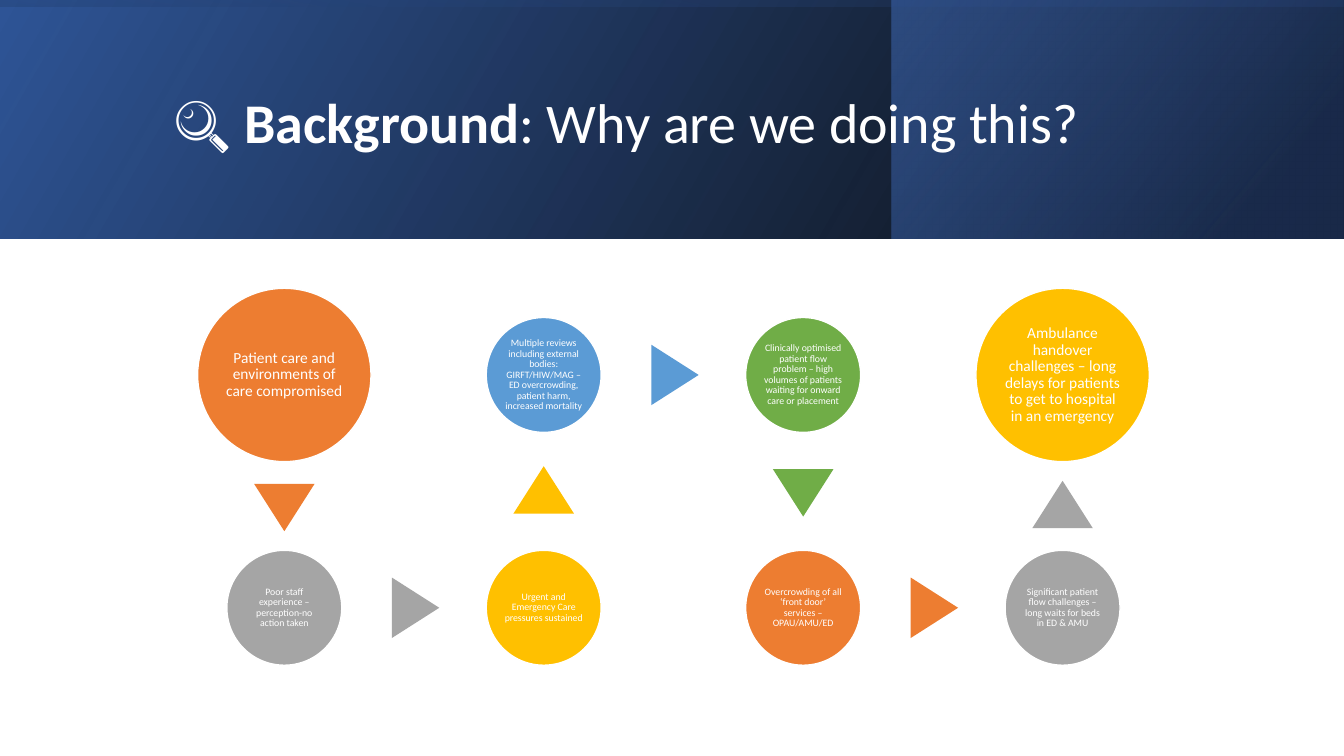
from lxml import etree
from pptx import Presentation
from pptx.dml.color import RGBColor
from pptx.enum.shapes import MSO_SHAPE
from pptx.enum.text import MSO_ANCHOR, MSO_AUTO_SIZE, PP_ALIGN
from pptx.oxml.ns import qn
from pptx.util import Inches, Pt

RECTANGLE = MSO_SHAPE.RECTANGLE
OVAL = MSO_SHAPE.OVAL
TRIANGLE = MSO_SHAPE.ISOSCELES_TRIANGLE
MIDDLE = MSO_ANCHOR.MIDDLE
LEFT, CENTER = PP_ALIGN.LEFT, PP_ALIGN.CENTER
NO_AUTOFIT = MSO_AUTO_SIZE.NONE

FONT = "Calibri"
TITLE_ONLY = 5
COLORS = {
    "white": "FFFFFF", "black": "000000", "navy": "203864",
    "deep_blue": "2F5597", "royal": "4472C4", "orange": "ED7D31",
    "gray": "A5A5A5", "gold": "FFC000", "sky": "5B9BD5", "green": "70AD47",
}

# Header bands: left, top, width, height, rotation, gradient angle,
# and stops of position %, colour, opacity %
BANDS = [
    (0, 0, 13.33, 2.37, 0, 330,
     [(0, "black", 96), (100, "deep_blue", 100)]),
    (8.84, 0, 4.48, 2.37, 0, 320,
     [(19, "navy", 68), (100, "royal", 48)]),
    (5.48, -5.48, 2.37, 13.33, 270, 350,
     [(23, "deep_blue", 16), (99, "black", 45)]),
]

# Flow grid: centre of the first column, pitch, and centre of each row
FIRST_COLUMN, COLUMN_PITCH = 2.82, 2.573
ROWS = (3.72, 6.03)
ARROW_WIDTH, ARROW_HEIGHT, ARROW_SHIFT = 0.6, 0.47, 0.015

# Circle sizes: diameter, text inset, font size
SIZES = {"large": (1.72, 0.02, 11), "small": (1.14, 0.01, 7)}

# Steps in reading order: column, row, size, colour, wording
STEPS = [
    (0, 0, "large", "orange",
     "Patient care and environments of care compromised"),
    (0, 1, "small", "gray",
     "Poor staff experience – perception-no action taken"),
    (1, 1, "small", "gold", "Urgent and Emergency Care pressures sustained"),
    (1, 0, "small", "sky",
     "Multiple reviews including external bodies: GIRFT/HIW/MAG – "
     "ED overcrowding, patient harm, increased mortality"),
    (2, 0, "small", "green",
     "Clinically optimised patient flow problem – high volumes of patients "
     "waiting for onward care or placement"),
    (2, 1, "small", "orange",
     "Overcrowding of all ‘front door’ services – OPAU/AMU/ED"),
    (3, 1, "small", "gray",
     "Significant patient flow challenges – long waits for beds in ED & AMU"),
    (3, 0, "large", "gold",
     "Ambulance handover challenges – long delays for patients to get to "
     "hospital in an emergency"),
]


def rgb(name):
    return RGBColor.from_string(COLORS[name])


def apply(target, formats):
    for attribute, value in formats.items():
        setattr(target, attribute, value)


def add_run(paragraph, text, size, bold=False):
    run = paragraph.add_run()
    run.text = text
    apply(run.font, {"name": FONT, "size": Pt(size), "bold": bold})
    run.font.color.rgb = rgb("white")


def add_filled(shapes, kind, center, width, height, color):
    x, y = center
    shape = shapes.add_shape(kind, Inches(x - width / 2), Inches(y - height / 2),
                             Inches(width), Inches(height))
    shape.shadow.inherit = False
    shape.fill.solid()
    shape.fill.fore_color.rgb = rgb(color)
    shape.line.fill.background()
    return shape


def set_gradient(shape, angle, stops):
    """Swap the solid fill for a linear gradient with transparent stops."""
    gradient = etree.Element(qn("a:gradFill"))
    stop_list = etree.SubElement(gradient, qn("a:gsLst"))
    for position, color, opacity in stops:
        stop = etree.SubElement(stop_list, qn("a:gs"), pos=str(position * 1000))
        tint = etree.SubElement(stop, qn("a:srgbClr"), val=COLORS[color])
        etree.SubElement(tint, qn("a:alpha"), val=str(opacity * 1000))
    etree.SubElement(gradient, qn("a:lin"), ang=str(angle * 60000), scaled="0")
    properties = shape.element.spPr
    properties.replace(properties.find(qn("a:solidFill")), gradient)


def add_band(shapes, left, top, width, height, rotation, angle, stops):
    center = (left + width / 2, top + height / 2)
    band = add_filled(shapes, RECTANGLE, center, width, height, "deep_blue")
    band.rotation = rotation
    band.element.spPr.find(qn("a:xfrm")).set("flipH", "1")
    set_gradient(band, angle, stops)


def format_title(slide):
    title = slide.shapes.title
    apply(title, {"left": Inches(1.51), "top": Inches(0.38),
                  "width": Inches(10.63), "height": Inches(1.72)})
    apply(title.text_frame, {"word_wrap": True, "vertical_anchor": MIDDLE,
                             "auto_size": NO_AUTOFIT})
    heading = title.text_frame.paragraphs[0]
    apply(heading, {"alignment": LEFT, "line_spacing": 0.9})
    for text, bold in ((" ", True), ("🔍 ", False), ("Background", True),
                       (": Why are we doing this?", False)):
        add_run(heading, text, 40, bold)
    # Bring the title in front of the bands
    slide.shapes.element.append(title.element)


def step_center(step):
    return FIRST_COLUMN + COLUMN_PITCH * step[0], ROWS[step[1]]


def add_step(shapes, step):
    size, color, wording = step[2:]
    diameter, inset, font_size = SIZES[size]
    circle = add_filled(shapes, OVAL, step_center(step), diameter, diameter, color)
    circle.line.color.rgb = rgb("white")
    circle.line.width = Pt(1)
    frame = circle.text_frame
    apply(frame, {"word_wrap": True, "vertical_anchor": MIDDLE})
    apply(frame, {f"margin_{side}": Inches(inset)
                  for side in ("left", "right", "top", "bottom")})
    paragraph = frame.paragraphs[0]
    apply(paragraph, {"alignment": CENTER, "line_spacing": 0.9})
    add_run(paragraph, wording, font_size)


def add_arrow(shapes, step, following):
    """Place a triangle midway in the gap, nudged the way it points."""
    (x1, y1), (x2, y2) = step_center(step), step_center(following)
    radius_difference = (SIZES[step[2]][0] - SIZES[following[2]][0]) / 2
    shift = radius_difference / 2 + ARROW_SHIFT
    x, y = (x1 + x2) / 2, (y1 + y2) / 2
    if x2 > x1:
        x, rotation = x + shift, 90
    elif y2 > y1:
        y, rotation = y + shift, 180
    else:
        y, rotation = y - shift, 0
    arrow = add_filled(shapes, TRIANGLE, (x, y), ARROW_WIDTH, ARROW_HEIGHT, step[3])
    arrow.rotation = rotation


def main():
    prs = Presentation()
    prs.slide_width, prs.slide_height = Inches(13.33), Inches(7.5)
    slide = prs.slides.add_slide(prs.slide_layouts[TITLE_ONLY])

    # Header
    for band in BANDS:
        add_band(slide.shapes, *band)
    format_title(slide)

    # Flow of steps and arrows
    flow = slide.shapes.add_group_shape().shapes
    for step, following in zip(STEPS, STEPS[1:]):
        add_step(flow, step)
        add_arrow(flow, step, following)
    add_step(flow, STEPS[-1])

    prs.save("out.pptx")


if __name__ == "__main__":
    main()
